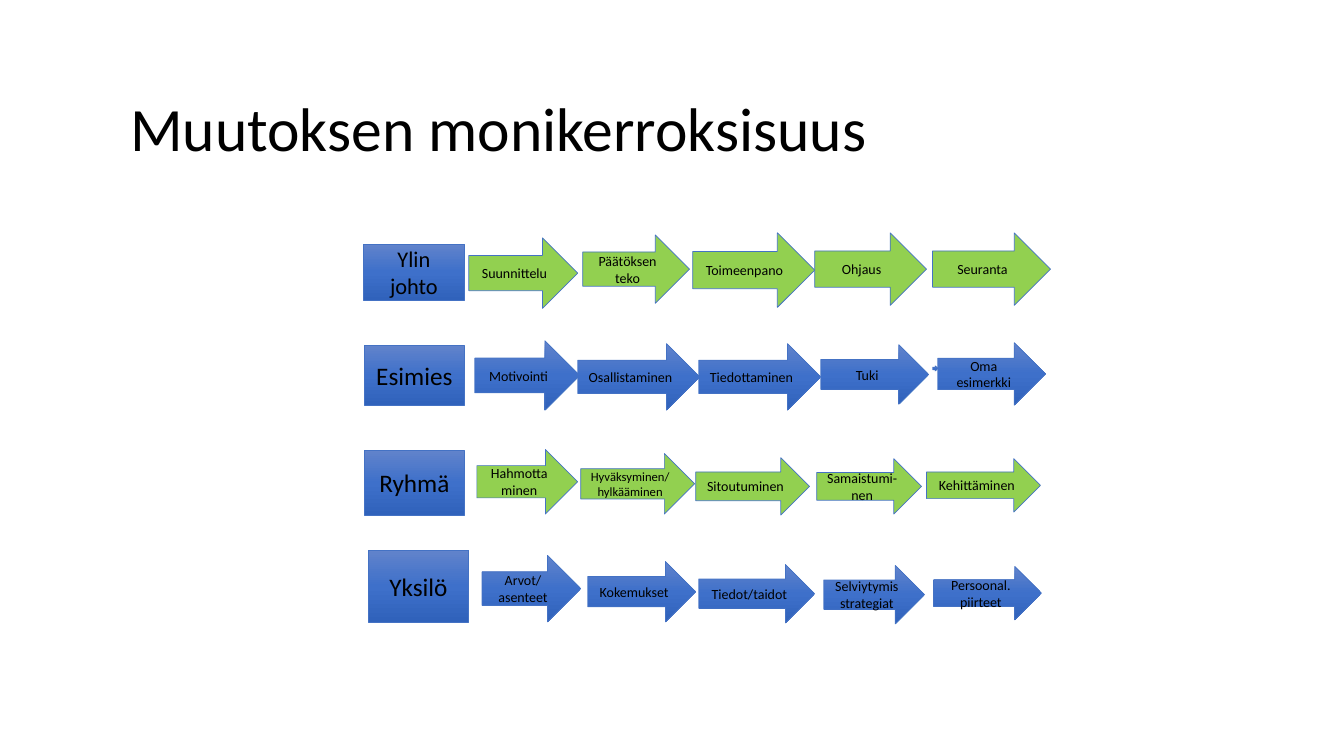
from copy import deepcopy
from dataclasses import dataclass

from pptx import Presentation
from pptx.dml.color import RGBColor
from pptx.enum.shapes import MSO_SHAPE
from pptx.enum.text import MSO_ANCHOR, MSO_AUTO_SIZE, PP_ALIGN
from pptx.oxml.ns import qn
from pptx.util import Inches, Pt


@dataclass(frozen=True)
class Theme:
    font: str = "Calibri"
    text: str = "000000"
    line: str = "4472C4"
    green: str = "92D050"
    blue_gradient: tuple = ("6183CB", "3E70CA", "3062BB")
    title_size: int = 44
    level_size: int = 18
    small_level_size: int = 16
    step_size: int = 10
    small_step_size: int = 9


THEME = Theme()
GREEN, BLUE = THEME.green, THEME.blue_gradient

# Each level: name, size, box, fill of its steps, and the steps as (text, box).
LEVELS = [
    ("Ylin johto", THEME.small_level_size, (3.6, 2.42, 1.01, 0.56), GREEN, [
        ("Suunnittelu", (4.65, 2.36, 1.08, 0.7)),
        ("Päätöksen\nteko", (5.78, 2.33, 1.06, 0.68)),
        ("Toimeenpano", (6.87, 2.31, 1.21, 0.74)),
        ("Ohjaus", (8.08, 2.31, 1.11, 0.72)),
        ("Seuranta", (9.25, 2.31, 1.17, 0.72)),
    ]),
    ("Esimies", THEME.level_size, (3.61, 3.43, 1, 0.59), BLUE, [
        ("Motivointi", (4.71, 3.38, 1.04, 0.69)),
        ("Osallistaminen", (5.73, 3.41, 1.21, 0.66)),
        ("Tiedottaminen", (6.93, 3.41, 1.21, 0.66)),
        ("Tuki", (8.14, 3.42, 1.07, 0.59)),
        ("", (9.25, 3.63, 0.05, 0.05)),
        ("Oma esimerkki", (9.3, 3.4, 1.07, 0.62)),
    ]),
    ("Ryhmä", THEME.level_size, (3.61, 4.47, 1, 0.64), GREEN, [
        ("Hahmottaminen", (4.73, 4.46, 1, 0.64)),
        ("Hyväksyminen/ hylkääminen", (5.76, 4.5, 1.13, 0.6)),
        ("Sitoutuminen", (6.9, 4.54, 1.13, 0.57)),
        ("Samaistumi-\nnen", (8.1, 4.55, 1.04, 0.55)),
        ("Kehittäminen", (9.19, 4.55, 1.13, 0.53)),
    ]),
    ("Yksilö", THEME.level_size, (3.65, 5.46, 1, 0.71), BLUE, [
        ("Arvot/\nasenteet", (4.78, 5.51, 0.98, 0.66)),
        ("Kokemukset", (5.83, 5.57, 1.07, 0.6)),
        ("Tiedot/taidot", (6.93, 5.6, 1.15, 0.58)),
        ("Selviytymis\nstrategiat", (8.17, 5.61, 1, 0.58)),
        ("Persoonal.\npiirteet", (9.26, 5.62, 1.07, 0.53)),
    ]),
]


def add_run(paragraph, text, size):
    run = paragraph.add_run()
    run.text = text
    run.font.name = THEME.font
    run.font.size = Pt(size)
    run.font.color.rgb = RGBColor.from_string(THEME.text)


def fill_shape(shape, fill):
    """Fill with one colour, or with a tuple of three as a downward gradient."""
    if isinstance(fill, str):
        shape.fill.solid()
        shape.fill.fore_color.rgb = RGBColor.from_string(fill)
        return
    shape.fill.gradient()
    shape.fill.gradient_angle = 270
    stop_list = shape._element.spPr.find(qn("a:gradFill")).find(qn("a:gsLst"))
    stop_list.insert(1, deepcopy(stop_list[0]))
    for stop, position, color in zip(shape.fill.gradient_stops, (0, 0.5, 1), fill):
        stop.position = position
        stop.color.rgb = RGBColor.from_string(color)


def add_block(slide, preset, box, fill, text, size):
    shape = slide.shapes.add_shape(preset, *map(Inches, box))
    shape.shadow.inherit = False
    fill_shape(shape, fill)
    shape.line.color.rgb = RGBColor.from_string(THEME.line)
    shape.line.width = Pt(0.5)
    if not text:
        return
    frame = shape.text_frame
    frame.word_wrap = True
    frame.vertical_anchor = MSO_ANCHOR.MIDDLE
    for index, line in enumerate(text.split("\n")):
        paragraph = frame.add_paragraph() if index else frame.paragraphs[0]
        paragraph.alignment = PP_ALIGN.CENTER
        add_run(paragraph, line, size)


def add_title(slide, text):
    title = slide.shapes.title
    title.left, title.top = Inches(1.29), Inches(0.55)
    title.width, title.height = Inches(11.35), Inches(1.09)
    frame = title.text_frame
    frame.margin_left = frame.margin_right = 0
    frame.margin_top = frame.margin_bottom = 0
    frame.auto_size = MSO_AUTO_SIZE.NONE
    frame.word_wrap = True
    frame.vertical_anchor = MSO_ANCHOR.BOTTOM
    paragraph = frame.paragraphs[0]
    paragraph.alignment = PP_ALIGN.LEFT
    paragraph.line_spacing = 0.9
    add_run(paragraph, text, THEME.title_size)


def add_level(slide, name, size, box, step_fill, steps):
    add_block(slide, MSO_SHAPE.RECTANGLE, box, BLUE, name, size)
    for text, step_box in steps:
        step_size = THEME.small_step_size if "/ " in text else THEME.step_size
        add_block(slide, MSO_SHAPE.RIGHT_ARROW, step_box, step_fill, text, step_size)


def main():
    presentation = Presentation()
    presentation.slide_width = Inches(13.33)
    presentation.slide_height = Inches(7.5)
    slide = presentation.slides.add_slide(presentation.slide_layouts[5])
    add_title(slide, "Muutoksen monikerroksisuus")
    for level in LEVELS:
        add_level(slide, *level)
    presentation.save("out.pptx")


if __name__ == "__main__":
    main()
